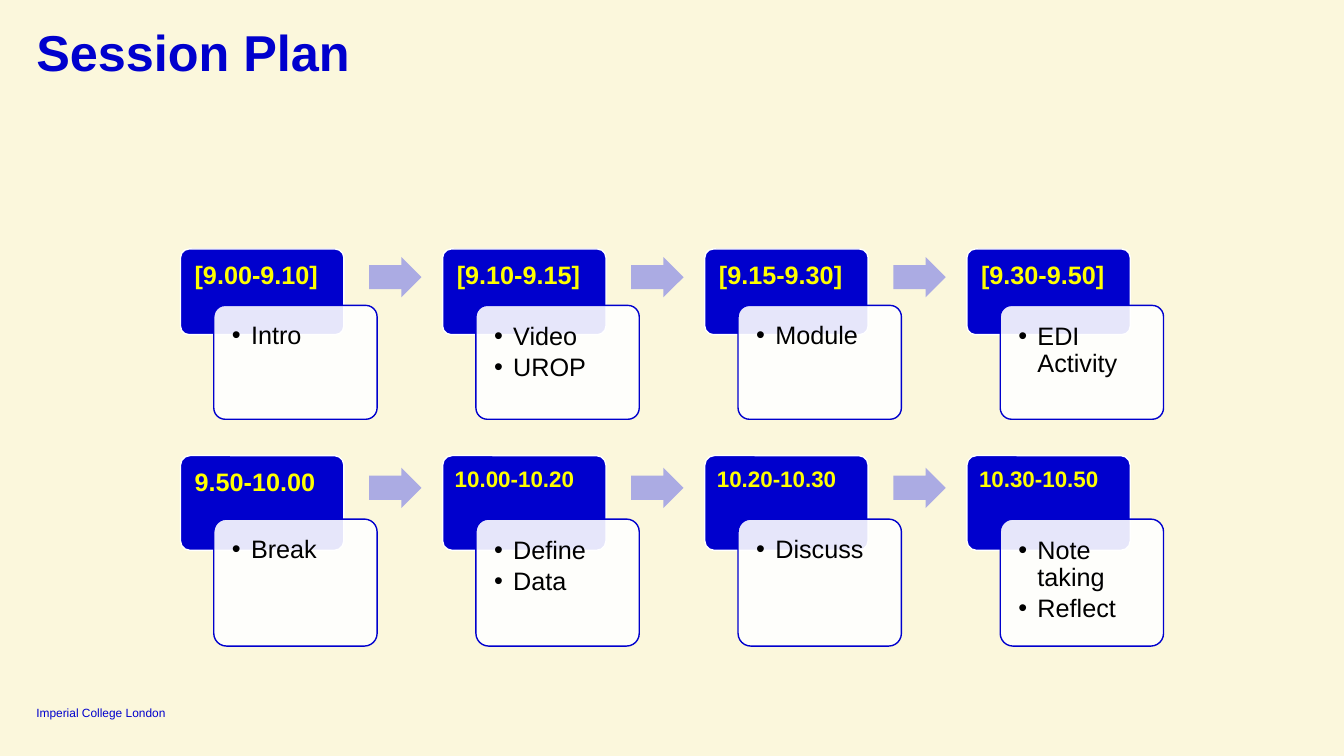
"""Build the Session Plan slide: two rows of timed steps joined by arrows."""
from lxml.etree import SubElement
from pptx import Presentation
from pptx.dml.color import RGBColor
from pptx.enum.shapes import MSO_SHAPE
from pptx.enum.text import MSO_ANCHOR, PP_ALIGN
from pptx.oxml.ns import qn
from pptx.util import Inches, Pt

TITLE = "Session Plan"
FOOTER = "Imperial College London"
ROWS = [
    {
        "top": 2.47, "label_height": 0.85, "label_text": 0.57,
        "detail_top": 3.03, "detail_height": 1.13, "arrow_top": 2.55,
        "steps": [
            ("[9.00-9.10]", 18, ["Intro"]),
            ("[9.10-9.15]", 18, ["Video", "UROP"]),
            ("[9.15-9.30]", 18, ["Module"]),
            ("[9.30-9.50]", 18, ["EDI Activity"]),
        ],
    },
    {
        "top": 4.52, "label_height": 0.94, "label_text": 0.63,
        "detail_top": 5.15, "detail_height": 1.26, "arrow_top": 4.64,
        "steps": [
            ("9.50-10.00", 18, ["Break"]),
            ("10.00-10.20", 16, ["Define", "Data"]),
            ("10.20-10.30", 16, ["Discuss"]),
            ("10.30-10.50", 16, ["Note taking", "Reflect"]),
        ],
    },
]
COLORS = {
    "cream": "FBF7DC", "blue": "0000CD", "lilac": "ABABE3",
    "yellow": "FFFF00", "white": "FFFFFF", "black": "000000",
}
FIRST_LEFT, STEP_PITCH, CARD_WIDTH = 1.79, 2.6, 1.62
DETAIL_SHIFT, ARROW_SHIFT, DETAIL_INSET = 0.33, 1.87, 0.04
BULLET_INDENT = 0.19


def color(name):
    return RGBColor.from_string(COLORS[name])


def add_shape(page, kind, area, fill, adjustments, line=None, alpha=None):
    shape = page.shapes.add_shape(kind, *map(Inches, area))
    shape.shadow.inherit = False
    for index, value in enumerate(adjustments):
        shape.adjustments[index] = value
    shape.fill.solid()
    shape.fill.fore_color.rgb = color(fill)
    if alpha:
        tone = shape.fill._xPr.find(qn("a:solidFill"))[0]
        SubElement(tone, qn("a:alpha"), val=str(alpha * 1000))
    if line:
        shape.line.color.rgb = color(line)
        shape.line.width = Pt(1)
    else:
        shape.line.fill.background()


def add_bullet(para):
    properties = para._p.get_or_add_pPr()
    properties.set("marL", str(Inches(BULLET_INDENT)))
    properties.set("indent", str(-Inches(BULLET_INDENT)))
    SubElement(properties, qn("a:buFont"), typeface="Arial")
    SubElement(properties, qn("a:buChar"), char="•")


def add_text(page, area, lines, size, tone, bold=False, insets=(0, 0, 0, 0),
             spacing=0.9, after=0, bulleted=False, anchor=MSO_ANCHOR.TOP):
    frame = page.shapes.add_textbox(*map(Inches, area)).text_frame
    frame.word_wrap = True
    frame.vertical_anchor = anchor
    for side, inset in zip(("left", "top", "right", "bottom"), insets):
        setattr(frame, f"margin_{side}", Inches(inset))
    layout = {"alignment": PP_ALIGN.LEFT, "line_spacing": spacing,
              "space_before": Pt(0), "space_after": Pt(after)}
    style = {"name": "Arial", "size": Pt(size), "bold": bold}
    for index, line in enumerate(lines):
        para = frame.add_paragraph() if index else frame.paragraphs[0]
        if bulleted:
            add_bullet(para)
        for name, value in layout.items():
            setattr(para, name, value)
        span = para.add_run()
        span.text = line
        for name, value in style.items():
            setattr(span.font, name, value)
        span.font.color.rgb = color(tone)


def add_step(page, row, left, label, size, details):
    top, detail_top, detail_height = row["top"], row["detail_top"], row["detail_height"]
    detail_left = left + DETAIL_SHIFT
    inset = 0.14 if size == 18 else 0.12
    add_shape(page, MSO_SHAPE.ROUNDED_RECTANGLE,
              (left, top, CARD_WIDTH, row["label_height"]), "blue", [0.1], "white")
    add_text(page, (left, top, CARD_WIDTH, row["label_text"]), [label], size, "yellow",
             bold=True, insets=(inset, inset, inset, 0.07))
    add_shape(page, MSO_SHAPE.ROUNDED_RECTANGLE,
              (detail_left, detail_top, CARD_WIDTH, detail_height),
              "white", [0.1], "blue", alpha=90)
    add_text(page, (detail_left + DETAIL_INSET, detail_top + DETAIL_INSET,
                    CARD_WIDTH - 2 * DETAIL_INSET, detail_height - 2 * DETAIL_INSET),
             details, 18, "black", insets=(0.14,) * 4, after=3, bulleted=True)


def main():
    deck = Presentation()
    deck.slide_width, deck.slide_height = Inches(13.33), Inches(7.5)
    page = deck.slides.add_slide(deck.slide_layouts[6])
    page.background.fill.solid()
    page.background.fill.fore_color.rgb = color("cream")
    add_text(page, (0.36, 6.99, 1.55, 0.15), [FOOTER], 8.5, "blue",
             spacing=1.0, anchor=MSO_ANCHOR.BOTTOM)
    add_text(page, (0.36, 0.28, 12.62, 0.41), [TITLE], 36, "blue", bold=True)
    for row in ROWS:
        for column, step in enumerate(row["steps"]):
            left = FIRST_LEFT + column * STEP_PITCH
            add_step(page, row, left, *step)
            if column < len(row["steps"]) - 1:
                add_shape(page, MSO_SHAPE.RIGHT_ARROW,
                          (left + ARROW_SHIFT, row["arrow_top"], 0.52, 0.4),
                          "lilac", [0.6, 0.5])
    deck.save("out.pptx")


if __name__ == "__main__":
    main()
